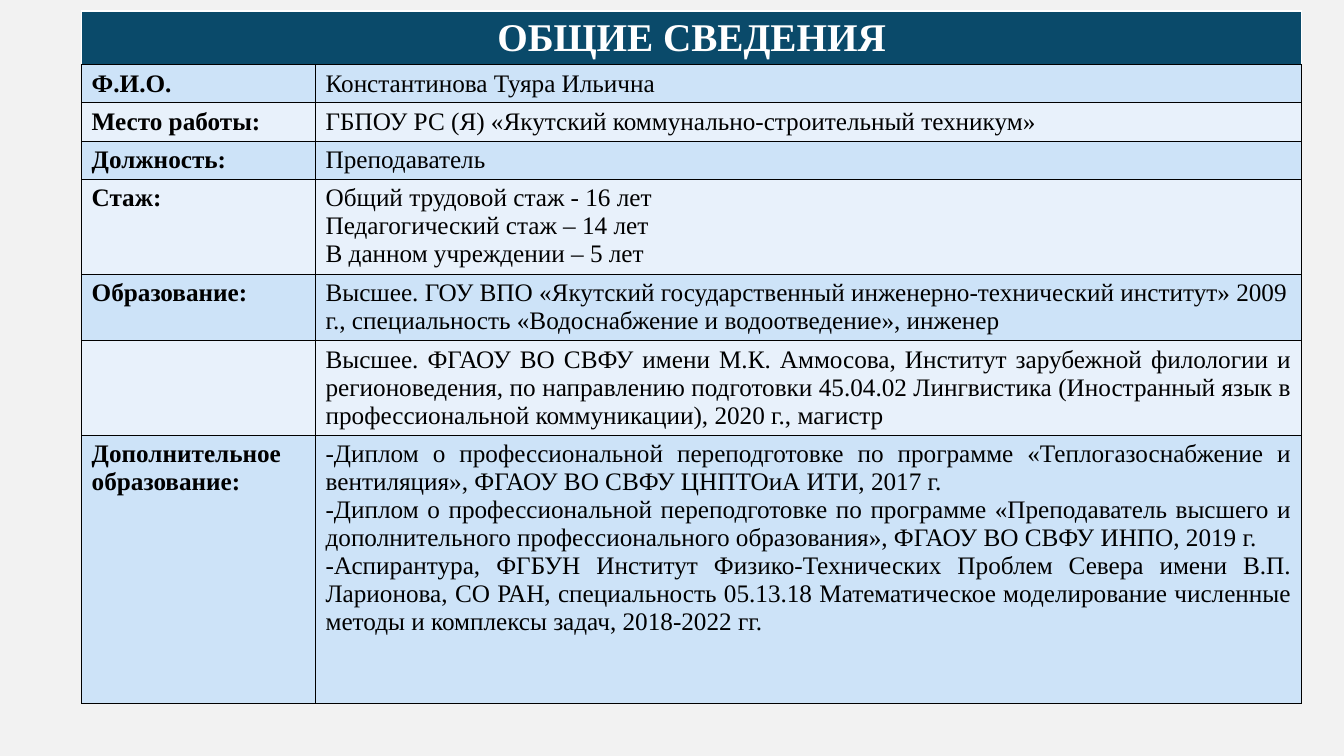
from dataclasses import dataclass

from lxml import etree
from pptx import Presentation
from pptx import util as u
from pptx.dml.color import RGBColor
from pptx.enum import text
from pptx.oxml import ns

FONT = "Times New Roman"
BLACK = RGBColor(0x00, 0x00, 0x00)
WHITE = RGBColor(0xFF, 0xFF, 0xFF)
PAGE_GRAY = RGBColor(0xF2, 0xF2, 0xF2)
TITLE_BLUE = RGBColor(0x0A, 0x4A, 0x6A)
BANDS = (RGBColor(0xCD, 0xE3, 0xF8), RGBColor(0xE8, 0xF1, 0xFB))

LEFT, TOP = 0.81, 0.11
COLUMN_WIDTHS = (2.32, 9.78)
TITLE_HEIGHT = 0.53
LEFT_ALIGN = text.PP_ALIGN.LEFT
JUSTIFY = text.PP_ALIGN.JUSTIFY
CENTER = text.PP_ALIGN.CENTER


@dataclass
class Entry:
    label: str
    lines: tuple[str, ...]
    height: float = 0.38
    align: text.PP_ALIGN = LEFT_ALIGN


ENTRIES = (
    Entry("Ф.И.О.", ("Константинова Туяра Ильична",)),
    Entry("Место работы:", ("ГБПОУ РС (Я) «Якутский коммунально-строительный техникум»",)),
    Entry("Должность:", ("Преподаватель",)),
    Entry("Стаж:", (
        "Общий трудовой стаж - 16 лет",
        "Педагогический стаж – 14 лет",
        "В данном учреждении – 5 лет",
    ), 0.94, JUSTIFY),
    Entry("Образование:", (
        "Высшее. ГОУ ВПО «Якутский государственный инженерно-технический институт» 2009 г., "
        "специальность «Водоснабжение и водоотведение», инженер",
    ), 0.66),
    Entry("", (
        "Высшее. ФГАОУ ВО СВФУ имени М.К. Аммосова, Институт зарубежной филологии и "
        "регионоведения, по направлению подготовки 45.04.02 Лингвистика (Иностранный язык в "
        "профессиональной коммуникации), 2020 г., магистр",
    ), 0.94, JUSTIFY),
    Entry("Дополнительное образование:", (
        "-Диплом о профессиональной переподготовке по программе «Теплогазоснабжение и "
        "вентиляция», ФГАОУ ВО СВФУ ЦНПТОиА ИТИ, 2017 г.",
        "-Диплом о профессиональной переподготовке по программе «Преподаватель высшего и "
        "дополнительного профессионального образования», ФГАОУ ВО СВФУ ИНПО, 2019 г.",
        "-Аспирантура, ФГБУН Институт Физико-Технических Проблем Севера имени В.П. "
        "Ларионова, СО РАН, специальность 05.13.18 Математическое моделирование численные "
        "методы и комплексы задач, 2018-2022 гг.",
    ), 2.66, JUSTIFY),
)


def set_borders(cell, colors: dict[str, RGBColor]) -> None:
    properties = cell._tc.get_or_add_tcPr()
    for side, color in colors.items():
        line = etree.SubElement(properties, ns.qn(f"a:ln{side}"), w=str(u.Pt(1)))
        fill = etree.SubElement(line, ns.qn("a:solidFill"))
        etree.SubElement(fill, ns.qn("a:srgbClr"), val=str(color))


def paint_cell(cell, fill: RGBColor, borders: dict[str, RGBColor]) -> None:
    set_borders(cell, borders)
    cell.fill.solid()
    cell.fill.fore_color.rgb = fill


def write_cell(cell, lines: tuple[str, ...], align: text.PP_ALIGN,
               color: RGBColor = BLACK, **font_format) -> None:
    frame = cell.text_frame
    for index, line in enumerate(lines):
        para = frame.add_paragraph() if index else frame.paragraphs[0]
        para.alignment = align
        if not line:
            continue
        span = para.add_run()
        span.text = line
        for name, value in {"name": FONT, "size": u.Pt(18), **font_format}.items():
            setattr(span.font, name, value)
        span.font.color.rgb = color


def main() -> None:
    deck = Presentation()
    deck.slide_width, deck.slide_height = u.Inches(13.33), u.Inches(7.5)
    page = deck.slides.add_slide(deck.slide_layouts[6])
    page.background.fill.solid()
    page.background.fill.fore_color.rgb = PAGE_GRAY

    # Table grid
    heights = (TITLE_HEIGHT, *(entry.height for entry in ENTRIES))
    table = page.shapes.add_table(
        len(heights), len(COLUMN_WIDTHS), u.Inches(LEFT), u.Inches(TOP),
        u.Inches(sum(COLUMN_WIDTHS)), u.Inches(sum(heights))).table
    table.first_row = table.horz_banding = False
    for column, width in zip(table.columns, COLUMN_WIDTHS):
        column.width = u.Inches(width)
    for row, height in zip(table.rows, heights):
        row.height = u.Inches(height)

    # Title row
    title = table.cell(0, 0)
    title.merge(table.cell(0, 1))
    for cell in table.rows[0].cells:
        paint_cell(cell, TITLE_BLUE, {"L": WHITE, "R": WHITE, "T": WHITE, "B": BLACK})
    write_cell(title, ("ОБЩИЕ СВЕДЕНИЯ",), CENTER, WHITE, size=u.Pt(28), bold=True)

    # Rows of personal details
    for index, entry in enumerate(ENTRIES):
        label, details = table.rows[index + 1].cells
        for cell in (label, details):
            paint_cell(cell, BANDS[index % 2], dict.fromkeys("LRTB", BLACK))
        write_cell(label, (entry.label,), LEFT_ALIGN, bold=True)
        write_cell(details, entry.lines, entry.align, bold=False)

    deck.save("out.pptx")


if __name__ == "__main__":
    main()
